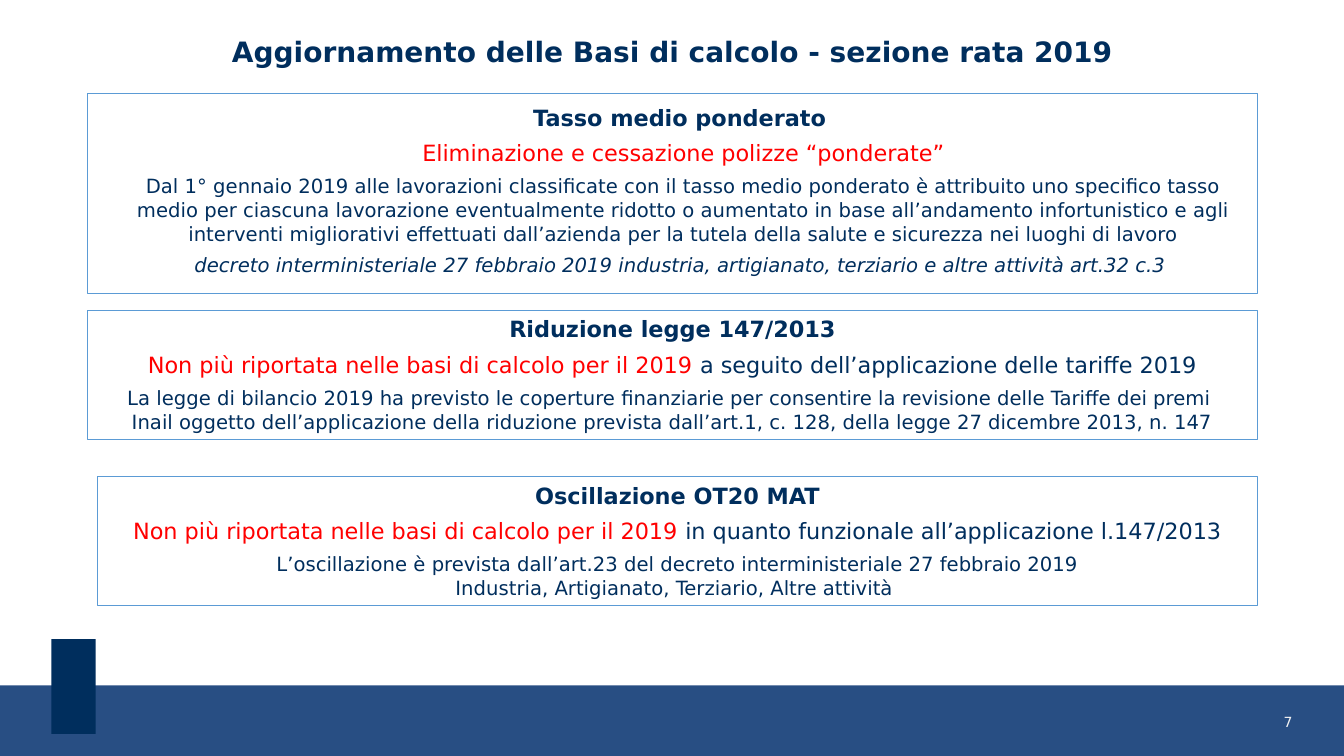
from pptx import Presentation
from pptx.dml.color import RGBColor
from pptx.enum.shapes import MSO_SHAPE as Shape
from pptx.enum.text import MSO_ANCHOR as Anchor, PP_ALIGN as Align
from pptx.util import Inches, Pt

COLORS = {
    "navy": "002E5D",
    "band": "284E83",
    "border": "5B9BD5",
    "red": "FF0000",
    "pale": "F2F2F2",
}
NOT_REPORTED = "Non più riportata nelle basi di calcolo per il 2019 "


def heading(text):
    return [(text, 16, "navy", "bold")]


def detail(text, style=""):
    return [(text, 14, "navy", style)]


def change(red_text, navy_text=""):
    spans = [(red_text, 16, "red", "")]
    if navy_text:
        spans.append((navy_text, 16, "navy", ""))
    return spans


class SlideBuilder:
    font = "DejaVu Sans"

    def __init__(self, slide):
        self.slide = slide

    def color(self, name):
        return RGBColor.from_string(COLORS[name])

    def rectangle(self, place, fill=None, line=None):
        box = self.slide.shapes.add_shape(Shape.RECTANGLE, *map(Inches, place))
        box.shadow.inherit = False
        if fill:
            box.fill.solid()
            box.fill.fore_color.rgb = self.color(fill)
        else:
            box.fill.background()
        if line:
            box.line.color.rgb = self.color(line)
            box.line.width = Pt(0.75)
        else:
            box.line.fill.background()
        return box

    def fill_text(self, box, paragraphs, align=Align.CENTER, insets=(0.1, 0.05),
                  gaps=(), indent=0, spacing=1.0):
        frame = box.text_frame
        frame.word_wrap = True
        frame.vertical_anchor = Anchor.TOP
        frame.margin_left = frame.margin_right = Inches(insets[0])
        frame.margin_top = frame.margin_bottom = Inches(insets[1])
        for index, spans in enumerate(paragraphs):
            para = frame.paragraphs[0] if index == 0 else frame.add_paragraph()
            para.alignment = align
            para.line_spacing = spacing
            para.space_after = Pt(gaps[index] if gaps else 0)
            if indent:
                properties = para._p.get_or_add_pPr()
                properties.set("marL", str(Inches(indent)))
                properties.set("indent", "0")
            for text, size, color, style in spans:
                span = para.add_run()
                span.text = text
                span.font.name = self.font
                span.font.size = Pt(size)
                span.font.color.rgb = self.color(color)
                span.font.bold = style == "bold"
                span.font.italic = style == "italic"

    def text(self, place, paragraphs, **layout):
        box = self.slide.shapes.add_textbox(*map(Inches, place))
        self.fill_text(box, paragraphs, **layout)

    def panel(self, place, paragraphs, **layout):
        box = self.rectangle(place, line="border")
        self.fill_text(box, paragraphs, **layout)


def main():
    deck = Presentation()
    deck.slide_width = Inches(13.33)
    deck.slide_height = Inches(7.5)
    page = SlideBuilder(deck.slides.add_slide(deck.slide_layouts[6]))

    page.rectangle((0, 6.8, 13.33, 0.7), fill="band")
    page.rectangle((0.51, 6.34, 0.44, 0.94), fill="navy")
    page.text(
        (0.51, 0.28, 12.32, 0.76),
        [[("Aggiornamento delle Basi di calcolo - sezione rata 2019", 20, "navy", "bold")]],
        insets=(0.1, 0.1), spacing=0.9,
    )
    page.panel(
        (0.87, 0.93, 11.6, 1.98),
        [
            heading("Tasso medio ponderato "),
            change("Eliminazione e cessazione polizze “ponderate”"),
            detail(
                "Dal 1° gennaio 2019 alle lavorazioni classificate con il tasso medio "
                "ponderato è attribuito uno specifico tasso medio per ciascuna lavorazione "
                "eventualmente ridotto o aumentato in base all’andamento infortunistico e "
                "agli interventi migliorativi effettuati dall’azienda per la tutela della "
                "salute e sicurezza nei luoghi di lavoro"
            ),
            detail(
                "decreto interministeriale 27 febbraio 2019 industria, artigianato, "
                "terziario e altre attività art.32 c.3 ", "italic"
            ),
        ],
        insets=(0.1, 0.1), gaps=(6, 6, 6, 6), indent=0.22,
    )
    page.panel(
        (0.87, 3.08, 11.6, 1.28),
        [
            heading("Riduzione legge 147/2013"),
            change(NOT_REPORTED, "a seguito dell’applicazione delle tariffe 2019"),
            detail(
                "La legge di bilancio 2019 ha previsto le coperture finanziarie per "
                "consentire la revisione delle Tariffe dei premi "
            ),
            detail(
                "Inail oggetto dell’applicazione della riduzione prevista dall’art.1, "
                "c. 128, della legge 27 dicembre 2013, n. 147"
            ),
        ],
        gaps=(6, 6, 0, 0),
    )
    page.panel(
        (0.97, 4.73, 11.5, 1.28),
        [
            heading("Oscillazione OT20 MAT"),
            change(NOT_REPORTED, "in quanto funzionale all’applicazione l.147/2013"),
            detail(
                "L’oscillazione è prevista dall’art.23 del decreto interministeriale "
                "27 febbraio 2019"
            ),
            detail("Industria, Artigianato, Terziario, Altre attività "),
        ],
        gaps=(6, 6, 0, 0),
    )
    page.text(
        (11.23, 7.08, 1.59, 0.4), [[("7", 10, "pale", "")]],
        align=Align.RIGHT, insets=(0, 0),
    )
    deck.save("out.pptx")


if __name__ == "__main__":
    main()
